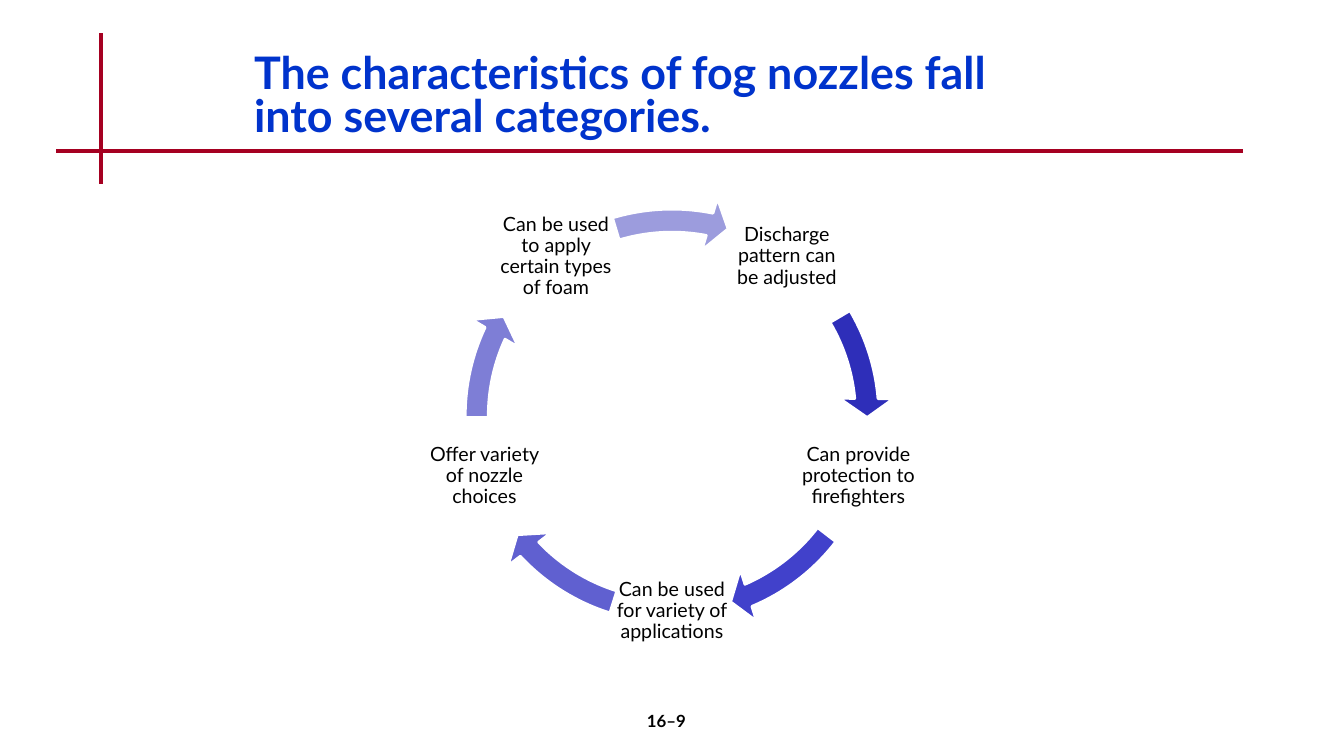
import math

import pptx
import pptx.dml.color
import pptx.enum.shapes
import pptx.enum.text
import pptx.oxml.ns
import pptx.util
from lxml import etree

RGBColor = pptx.dml.color.RGBColor
PP_ALIGN = pptx.enum.text.PP_ALIGN
MSO_ANCHOR = pptx.enum.text.MSO_ANCHOR

PX = 9144  # 100 px to the inch
FONT = "Lato"
WHITE = RGBColor(0xFF, 0xFF, 0xFF)
BLACK = RGBColor(0x00, 0x00, 0x00)
BLUE = RGBColor(0x00, 0x33, 0xCC)
RED = RGBColor(0xA5, 0x00, 0x21)

# label, arrow colour, arrow end and start angles
STEPS = [
    ("Discharge pattern can be adjusted", RGBColor(0x2E, 0x2E, 0xB9), 212.95, 197.65),
    ("Can provide protection to firefighters", RGBColor(0x41, 0x41, 0xCB), 40.16, 22.52),
    ("Can be used for variety of applications", RGBColor(0x60, 0x60, 0xD0), 82.12, 64.48),
    ("Offer variety of nozzle choices", RGBColor(0x7E, 0x7E, 0xD6), 123, 107.7),
    ("Can be used to apply certain types of foam", RGBColor(0x9C, 0x9C, 0xDD), 168.67, 151.97),
]
CENTER_X, CENTER_Y, RADIUS = 666, 412, 195
LABEL, RING = 117, 441


def px(*lengths):
    return [pptx.util.Emu(round(n) * PX) for n in lengths]


def write(tf, text, size, color, bold=False, align=PP_ALIGN.CENTER, spacing=1.0):
    """Fill the frame's first paragraph with one formatted run."""
    tf.word_wrap = True
    tf.auto_size = pptx.enum.text.MSO_AUTO_SIZE.NONE
    p = tf.paragraphs[0]
    p.alignment = align
    p.line_spacing = spacing
    r = p.add_run()
    r.text = text
    r.font.name = FONT
    r.font.size = pptx.util.Pt(size)
    r.font.bold = bold
    r.font.color.rgb = color


prs = pptx.Presentation()
prs.slide_width, prs.slide_height = px(1333, 750)
slide = prs.slides.add_slide(prs.slide_layouts[5])
shapes = slide.shapes

# Crossed rules
for ends in [(100, 33, 100, 183), (56, 150, 1233, 150)]:
    line = shapes.add_connector(pptx.enum.shapes.MSO_CONNECTOR.STRAIGHT, *px(*ends))
    line.line.color.rgb = RED
    line.line.width = pptx.util.Pt(3)
    sp_pr = line.element.find(pptx.oxml.ns.qn("p:spPr"))
    etree.SubElement(sp_pr, pptx.oxml.ns.qn("a:effectLst"))

# Title
title = shapes.title
title.left, title.top, title.width, title.height = px(242, 50, 827, 100)
title.text_frame.vertical_anchor = MSO_ANCHOR.TOP
write(title.text_frame, "The characteristics of fog nozzles fall into several categories.",
      32, BLUE, bold=True, align=PP_ALIGN.LEFT, spacing=0.8)

# Page number
page = shapes.add_textbox(*px(522, 700, 278, 50))
write(page.text_frame, "16–9", 12, BLACK, bold=True)

# Cycle: five labels, each followed by an arrow
for i, (text, color, end, start) in enumerate(STEPS):
    angle = math.radians(-54 + i * 360 / len(STEPS))
    x = CENTER_X + RADIUS * math.cos(angle)
    y = CENTER_Y + RADIUS * math.sin(angle)
    label = shapes.add_textbox(*px(x - LABEL / 2, y - LABEL / 2, LABEL, LABEL))
    tf = label.text_frame
    tf.margin_left, tf.margin_top, tf.margin_right, tf.margin_bottom = px(2, 2, 2, 2)
    tf.vertical_anchor = MSO_ANCHOR.MIDDLE
    write(tf, text, 14, BLACK, spacing=0.9)

    arrow = shapes.add_shape(pptx.enum.shapes.MSO_SHAPE.CIRCULAR_ARROW,
                             *px(CENTER_X - RING / 2, CENTER_Y - RING / 2, RING, RING))
    for n, value in enumerate([0.052, 3.355, end, start, 0.061]):
        arrow.adjustments[n] = value
    arrow.shadow.inherit = False
    arrow.fill.solid()
    arrow.fill.fore_color.rgb = color
    arrow.line.color.rgb = WHITE
    arrow.line.width = pptx.util.Pt(2)

prs.save("out.pptx")
